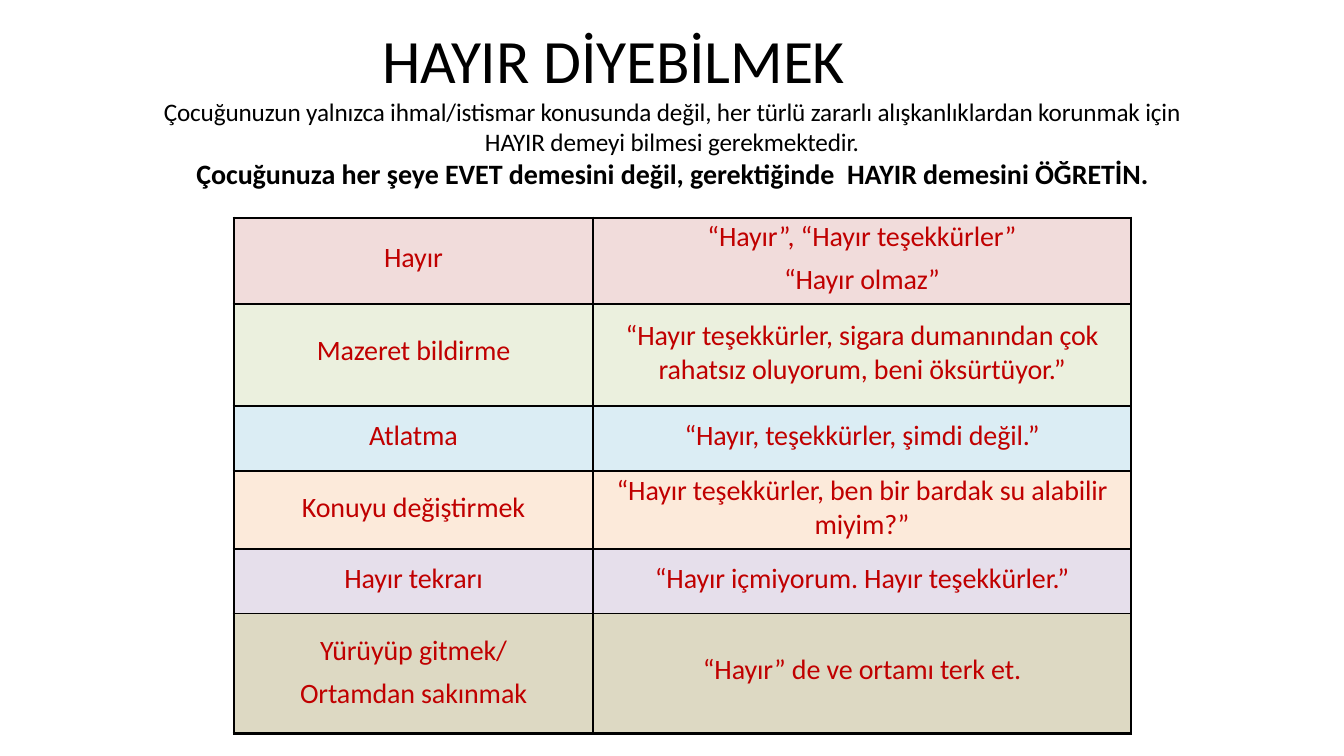
from lxml import etree
from pptx import Presentation
from pptx import util as u
from pptx.dml.color import RGBColor
from pptx.enum import text
from pptx.oxml import ns

COLORS = {
    "black": "000000", "red": "C00000", "pink": "F1DCDB", "green": "EBF0DE",
    "blue": "DBEDF4", "orange": "FCEADA", "purple": "E6DFEB", "tan": "DDD9C3",
}
TITLE = "HAYIR DİYEBİLMEK"
INTRO = [
    ("Çocuğunuzun yalnızca ihmal/istismar konusunda değil, her türlü zararlı "
     "alışkanlıklardan korunmak için HAYIR demeyi bilmesi gerekmektedir.", 18, False, -10),
    ("Çocuğunuza her şeye EVET demesini değil, gerektiğinde  HAYIR demesini ÖĞRETİN.",
     20, True, -5),
]
# (height, fill, (left top margin, paragraphs), (right top margin, paragraphs))
ROWS = [
    (86, "pink", (23, ["Hayır"]), (2, ["“Hayır”, “Hayır teşekkürler”", "“Hayır olmaz”"])),
    (102, "green", (30, ["Mazeret bildirme"]),
     (15, ["“Hayır teşekkürler, sigara dumanından çok\vrahatsız oluyorum, beni öksürtüyor.”"])),
    (65, "blue", (13, ["Atlatma"]), (13, ["“Hayır, teşekkürler, şimdi değil.”"])),
    (78, "orange", (20, ["Konuyu değiştirmek"]),
     (3, ["“Hayır teşekkürler, ben bir bardak su alabilir\vmiyim?”"])),
    (65, "purple", (13, ["Hayır tekrarı"]), (13, ["“Hayır içmiyorum. Hayır teşekkürler.”"])),
    (120, "tan", (20, ["Yürüyüp gitmek/", "Ortamdan sakınmak"]),
     (39, ["“Hayır” de ve ortamı terk et."])),
]
COLUMNS = [359, 538]
THIN, THICK = 1, 2.25


def px(n):
    return u.Emu(round(n * 914400 / 100.8))


def rgb(name):
    return RGBColor.from_string(COLORS[name])


def format_paragraph(p, size, color="black", bold=False, spacing=0,
                     align=text.PP_ALIGN.CENTER):
    p.alignment = align
    p.font.name = "Calibri"
    p.font.size = u.Pt(size)
    p.font.bold = bold
    p.font.color.rgb = rgb(color)
    p._p.get_or_add_pPr().get_or_add_defRPr().set("spc", str(spacing))


def clear_margins(tf):
    tf.margin_left = tf.margin_top = tf.margin_right = tf.margin_bottom = 0
    tf.word_wrap = True


def add_border(cell, side, width):
    tcPr = cell._tc.get_or_add_tcPr()
    ln = etree.SubElement(tcPr, ns.qn(f"a:ln{side}"), w=str(u.Pt(width)))
    fill = etree.SubElement(ln, ns.qn("a:solidFill"))
    etree.SubElement(fill, ns.qn("a:srgbClr"), val=COLORS["black"])


def fill_cell(cell, top, lines, fill, outer):
    for side in "LRTB":
        add_border(cell, side, THICK if side in outer else THIN)
    cell.fill.solid()
    cell.fill.fore_color.rgb = rgb(fill)
    cell.margin_left = cell.margin_right = cell.margin_bottom = 0
    cell.margin_top = px(top)
    cell.vertical_anchor = text.MSO_ANCHOR.TOP
    tf = cell.text_frame
    tf.text = "\n".join(lines)
    for i, p in enumerate(tf.paragraphs):
        format_paragraph(p, 20, "red", spacing=-10)
        p.space_before = u.Pt(6 if i else 0)


def add_title(s):
    title = s.shapes.title
    title.left, title.top, title.width, title.height = map(px, (382, 21, 666, 75))
    tf = title.text_frame
    tf.text = TITLE
    clear_margins(tf)
    tf.auto_size = text.MSO_AUTO_SIZE.NONE
    tf.vertical_anchor = text.MSO_ANCHOR.MIDDLE
    format_paragraph(tf.paragraphs[0], 44, spacing=-15, align=text.PP_ALIGN.LEFT)


def add_intro(s):
    tf = s.shapes.add_textbox(*map(px, (154, 96, 1036, 95))).text_frame
    clear_margins(tf)
    tf.text = "\n".join(line for line, *_ in INTRO)
    for p, (_, size, bold, spacing) in zip(tf.paragraphs, INTRO):
        format_paragraph(p, size, bold=bold, spacing=spacing)


def add_answers(s):
    height = sum(row[0] for row in ROWS)
    frame = s.shapes.add_table(len(ROWS), len(COLUMNS),
                               *map(px, (234, 218, sum(COLUMNS), height)))
    table = frame.table
    table.first_row = table.horz_banding = False
    for column, width in zip(table.columns, COLUMNS):
        column.width = px(width)
    for r, (row_height, fill, *cells) in enumerate(ROWS):
        table.rows[r].height = px(row_height)
        edge = ("T" if r == 0 else "") + ("B" if r == len(ROWS) - 1 else "")
        for c, (top, lines) in enumerate(cells):
            fill_cell(table.cell(r, c), top, lines, fill, edge + "LR"[c])


def main():
    prs = Presentation()
    prs.slide_width, prs.slide_height = px(1344), px(756)
    s = prs.slides.add_slide(prs.slide_layouts[5])
    add_title(s)
    add_intro(s)
    add_answers(s)
    prs.save("out.pptx")


if __name__ == "__main__":
    main()
